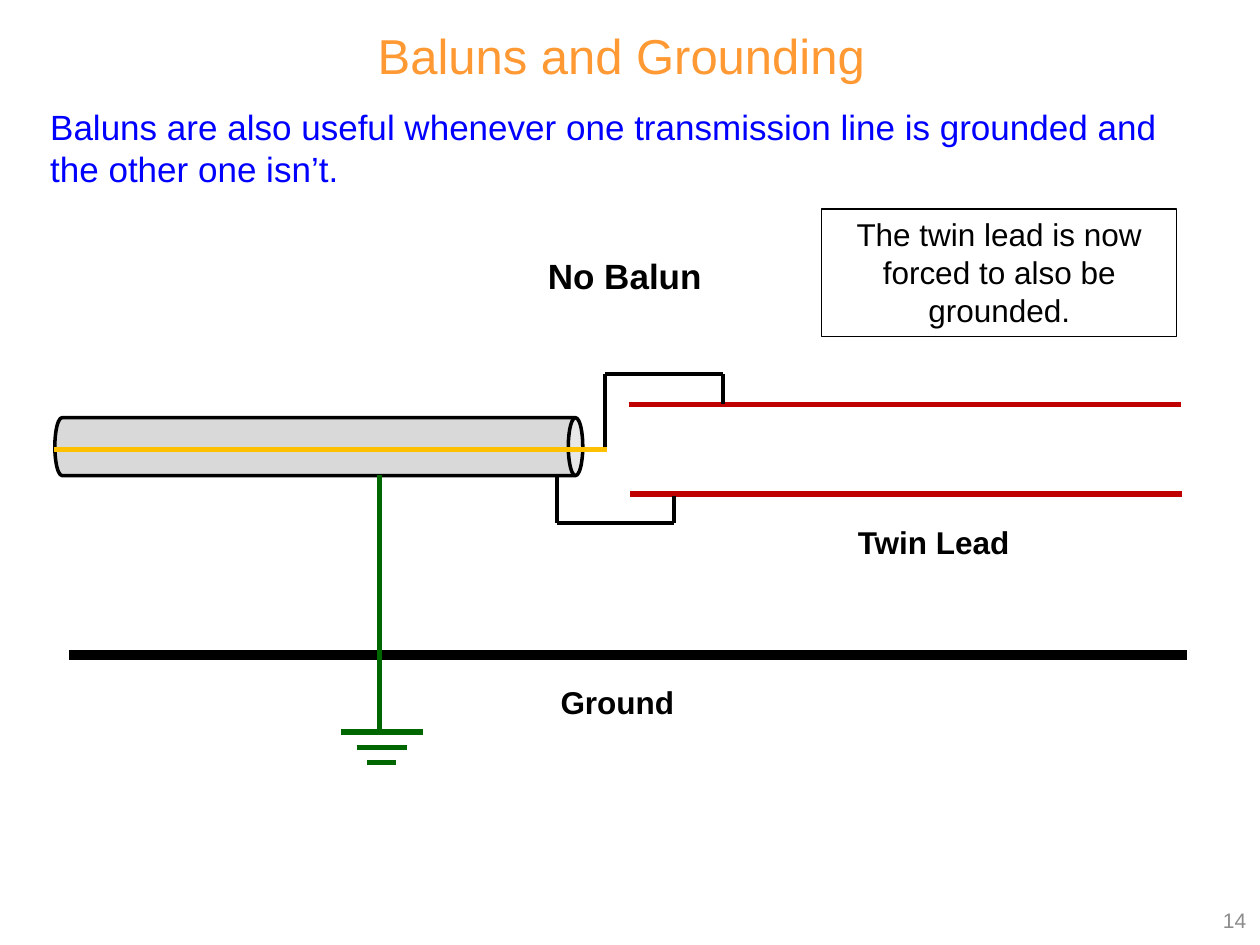
from typing import NamedTuple

from lxml import etree
from pptx import Presentation
from pptx.dml.color import RGBColor
from pptx.enum import shapes, text
from pptx.oxml.ns import qn
from pptx.util import Inches, Pt

BLACK, BLUE, ORANGE, GREY = "000000", "0000FF", "FF9933", "8C8C8C"
RED, GOLD, GREEN, SHIELD = "C00000", "FFC000", "006600", "D9D9D9"
LEFT, CENTER, RIGHT = text.PP_ALIGN.LEFT, text.PP_ALIGN.CENTER, text.PP_ALIGN.RIGHT


class Label(NamedTuple):
    words: str
    box: tuple[float, float, float, float]
    size: float
    color: str = BLACK
    bold: bool = False
    align: text.PP_ALIGN = LEFT
    wrap: bool = True
    anchor: text.MSO_ANCHOR = text.MSO_ANCHOR.TOP


class Wire(NamedTuple):
    points: list[tuple[float, float]]
    color: str
    width: float


TITLE = Label("Baluns and Grounding", (0.35, 0.15, 9.16, 0.57), 28, ORANGE, align=CENTER)
NOTE = Label("The twin lead is now forced to also be grounded.",
             (6.52, 1.66, 2.82, 1.01), 18, align=CENTER)
LABELS = [
    Label("14", (7.66, 7.1, 2.33, 0.4), 12, GREY, align=RIGHT,
          anchor=text.MSO_ANCHOR.MIDDLE),
    Label("Baluns are also useful whenever one transmission line is grounded "
          "and the other one isn’t.", (0.3, 0.79, 9.2, 0.77), 20, BLUE),
    Label("No Balun", (4.25, 1.97, 1.43, 0.44), 20, bold=True, wrap=False),
    Label("Twin Lead", (6.71, 4.1, 1.42, 0.4), 18, bold=True, wrap=False),
    Label("Ground", (4.35, 5.37, 1.11, 0.4), 18, bold=True, wrap=False),
]

CENTER_CONDUCTOR = Wire([(0.43, 3.57), (4.82, 3.57)], GOLD, 3)
TWIN_LEAD = [Wire([(4.99, 3.21), (9.37, 3.21)], RED, 3),
             Wire([(5, 3.92), (9.38, 3.92)], RED, 3)]
JUMPERS = [Wire([(4.42, 3.78), (4.42, 4.15), (5.35, 4.15), (5.35, 3.94)], BLACK, 2.25),
           Wire([(4.8, 3.55), (4.8, 2.97), (5.74, 2.97), (5.74, 3.21)], BLACK, 2.25)]
GROUND_PLANE = Wire([(0.55, 5.2), (9.42, 5.2)], BLACK, 6)
GROUND_LEAD = Wire([(3.01, 3.77), (3.01, 5.82)], GREEN, 3)
BAR_CENTER, BAR_TOP, BAR_GAP = 3.03, 5.81, 0.12
BAR_WIDTHS = (0.65, 0.4, 0.23)


def rgb(color: str) -> RGBColor:
    return RGBColor.from_string(color)


def write(sp, label: Label) -> None:
    tf = sp.text_frame
    tf.text = label.words
    tf.word_wrap = label.wrap
    tf.vertical_anchor = label.anchor
    tf.auto_size = text.MSO_AUTO_SIZE.NONE
    p = tf.paragraphs[0]
    p.alignment = label.align
    font = p.runs[0].font
    font.name, font.size, font.bold = "Arial", Pt(label.size), label.bold
    font.color.rgb = rgb(label.color)


def add_title(s, label: Label) -> None:
    sp = s.shapes.title
    sp.left, sp.top, sp.width, sp.height = map(Inches, label.box)
    write(sp, label)


def add_label(s, label: Label) -> None:
    write(s.shapes.add_textbox(*map(Inches, label.box)), label)


def add_note(s, label: Label) -> None:
    sp = s.shapes.add_shape(shapes.MSO_SHAPE.RECTANGLE, *map(Inches, label.box))
    sp.shadow.inherit = False
    sp.fill.background()
    sp.line.color.rgb = rgb(BLACK)
    sp.line.width = Pt(0.75)
    write(sp, label)


def add_coax(s) -> None:
    sp = s.shapes.add_shape(shapes.MSO_SHAPE.CAN, *map(Inches, (2.3, 1.45, 0.46, 4.19)))
    sp.rotation = 90
    sp.shadow.inherit = False
    sp.fill.solid()
    sp.fill.fore_color.rgb = rgb(SHIELD)
    sp.line.color.rgb = rgb(BLACK)
    sp.line.width = Pt(2)


def add_wire(s, wire: Wire) -> None:
    """Draw one straight connector for each leg of the wire."""
    for start, end in zip(wire.points, wire.points[1:]):
        line = s.shapes.add_connector(shapes.MSO_CONNECTOR.STRAIGHT,
                                      *map(Inches, start + end))
        line.line.color.rgb = rgb(wire.color)
        line.line.width = Pt(wire.width)
        etree.SubElement(line._element.spPr, qn("a:effectLst"))


def ground_bars() -> list[Wire]:
    bars = []
    for i, width in enumerate(BAR_WIDTHS):
        y = BAR_TOP + i * BAR_GAP
        bars.append(Wire([(BAR_CENTER - width / 2, y), (BAR_CENTER + width / 2, y)],
                         GREEN, 3))
    return bars


def main() -> None:
    prs = Presentation()
    prs.slide_width, prs.slide_height = Inches(10), Inches(7.5)
    s = prs.slides.add_slide(prs.slide_layouts[5])
    add_title(s, TITLE)
    add_coax(s)
    for wire in [CENTER_CONDUCTOR, *TWIN_LEAD, *JUMPERS, GROUND_PLANE,
                 GROUND_LEAD, *ground_bars()]:
        add_wire(s, wire)
    for label in LABELS:
        add_label(s, label)
    add_note(s, NOTE)
    prs.save("out.pptx")


if __name__ == "__main__":
    main()
